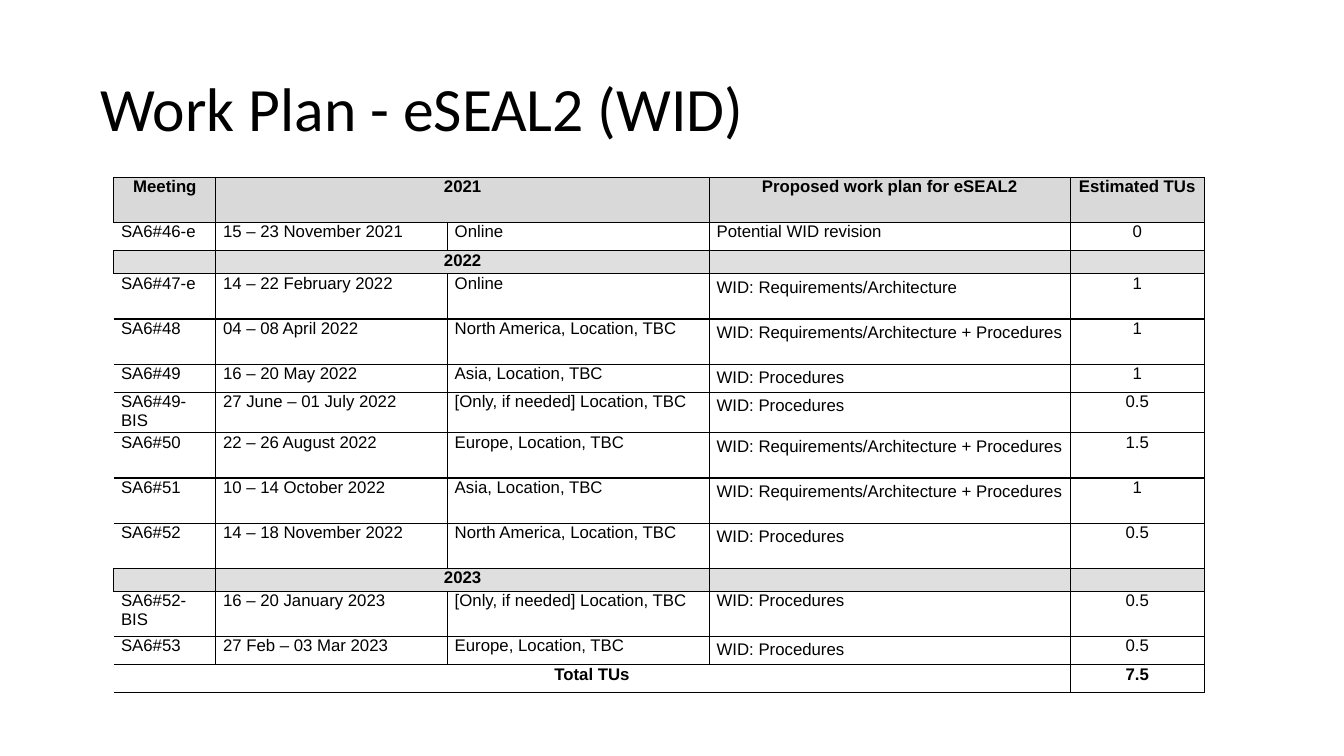
import dataclasses
import typing

import lxml.etree
import pptx
import pptx.dml.color
import pptx.enum.text
import pptx.oxml.ns
import pptx.util

Cm = pptx.util.Cm
Pt = pptx.util.Pt
CENTER = pptx.enum.text.PP_ALIGN.CENTER
LEFT = pptx.enum.text.PP_ALIGN.LEFT

COLUMN_WIDTHS = (2.57, 5.84, 6.6, 9.09, 3.38)
TALL, MEDIUM, SHORT = 1.14, 0.71, 0.58
WHITE, HEADER_GREY, YEAR_GREY = "FFFFFF", "D9D9D9", "DFDFDF"
PROCEDURES = "WID: Procedures"
ARCHITECTURE = "WID: Requirements/Architecture"
COMBINED = "WID: Requirements/Architecture + Procedures"
CELL_FORMAT = {
    "margin_left": Cm(0.18),
    "margin_right": Cm(0.18),
    "margin_top": 0,
    "margin_bottom": 0,
    "vertical_anchor": pptx.enum.text.MSO_ANCHOR.TOP,
}


@dataclasses.dataclass(frozen=True)
class PlanRow:
    texts: tuple[str, ...]
    height: float
    fill: str = WHITE
    bold: bool = False
    merge: tuple[int, int] | None = None
    plan_spacing: float = 1.0


def heading(texts: tuple[str, ...], height: float, fill: str) -> PlanRow:
    return PlanRow(texts, height, fill, True, (1, 2))


def meeting(name: str, dates: str, place: str, plan: str, units: str,
            height: float, plan_spacing: float = 1.15) -> PlanRow:
    return PlanRow((name, dates, place, plan, units), height, plan_spacing=plan_spacing)


ROWS = (
    heading(("Meeting", "2021", "", "Proposed work plan for eSEAL2", "Estimated TUs"),
            TALL, HEADER_GREY),
    meeting("SA6#46-e", "15 – 23 November 2021", "Online", "Potential WID revision", "0",
            MEDIUM, 1.0),
    heading(("", "2022", "", "", ""), SHORT, YEAR_GREY),
    meeting("SA6#47-e", "14 – 22 February 2022", "Online", ARCHITECTURE, "1", TALL),
    meeting("SA6#48", "04 – 08 April 2022", "North America, Location, TBC", COMBINED, "1", TALL),
    meeting("SA6#49", "16 – 20 May 2022", "Asia, Location, TBC", PROCEDURES, "1", MEDIUM),
    meeting("SA6#49-BIS", "27 June – 01 July 2022", "[Only, if needed] Location, TBC",
            PROCEDURES, "0.5", MEDIUM),
    meeting("SA6#50", "22 – 26 August 2022", "Europe, Location, TBC", COMBINED, "1.5", TALL),
    meeting("SA6#51", "10 – 14 October 2022", "Asia, Location, TBC", COMBINED, "1", TALL),
    meeting("SA6#52", "14 – 18 November 2022", "North America, Location, TBC",
            PROCEDURES, "0.5", TALL),
    heading(("", "2023", "", "", ""), SHORT, YEAR_GREY),
    meeting("SA6#52-BIS", "16 – 20 January 2023", "[Only, if needed] Location, TBC",
            PROCEDURES, "0.5", TALL, 1.0),
    meeting("SA6#53", "27 Feb – 03 Mar 2023", "Europe, Location, TBC", PROCEDURES, "0.5", MEDIUM),
    PlanRow(("Total TUs", "", "", "", "7.5"), MEDIUM, bold=True, merge=(0, 3)),
)


def color(value: str) -> pptx.dml.color.RGBColor:
    return pptx.dml.color.RGBColor.from_string(value)


def apply_format(target: typing.Any, values: dict[str, typing.Any]) -> None:
    for name, value in values.items():
        setattr(target, name, value)


def write_text(paragraph: typing.Any, text: str, font: str, size: float, bold: bool) -> None:
    run = paragraph.add_run()
    run.text = text
    apply_format(run.font, {"name": font, "size": Pt(size), "bold": bold})
    run.font.color.rgb = color("000000")


def add_borders(cell: typing.Any, has_left: bool) -> None:
    qn = pptx.oxml.ns.qn
    properties = cell._tc.get_or_add_tcPr()
    for side in ("L", "R", "T", "B"):
        line = lxml.etree.SubElement(properties, qn(f"a:ln{side}"), w=str(Pt(1)))
        if side == "L" and not has_left:
            lxml.etree.SubElement(line, qn("a:noFill"))
            continue
        fill = lxml.etree.SubElement(line, qn("a:solidFill"))
        lxml.etree.SubElement(fill, qn("a:srgbClr"), val="000000")


def fill_cell(cell: typing.Any, row: PlanRow, column: int) -> None:
    add_borders(cell, column > 0 or row.fill != WHITE)
    cell.fill.solid()
    cell.fill.fore_color.rgb = color(row.fill)
    apply_format(cell, CELL_FORMAT)
    paragraph = cell.text_frame.paragraphs[0]
    spacing = row.plan_spacing if column == 3 else 1.0
    if spacing > 1:
        cell.margin_top = Cm(0.03)
    apply_format(paragraph, {
        "alignment": CENTER if row.bold or column == 4 else LEFT,
        "space_before": Pt(1),
        "space_after": Pt(1),
        "line_spacing": spacing,
    })
    if row.texts[column]:
        write_text(paragraph, row.texts[column], "Arial", 12, row.bold)
    else:
        lxml.etree.SubElement(paragraph._p, pptx.oxml.ns.qn("a:endParaRPr"), sz="1200")


def add_title(slide: typing.Any) -> None:
    title = slide.shapes.add_textbox(Cm(2.29), Cm(0.97), Cm(29.21), Cm(3.68))
    apply_format(title.text_frame, {
        "word_wrap": True,
        "vertical_anchor": pptx.enum.text.MSO_ANCHOR.MIDDLE,
    })
    paragraph = title.text_frame.paragraphs[0]
    paragraph.line_spacing = 0.9
    write_text(paragraph, "Work Plan - eSEAL2 (WID)", "Calibri", 44, False)


def add_work_plan(slide: typing.Any) -> None:
    table = slide.shapes.add_table(
        len(ROWS), len(COLUMN_WIDTHS), Cm(2.87), Cm(4.47),
        Cm(sum(COLUMN_WIDTHS)), Cm(sum(row.height for row in ROWS)),
    ).table
    apply_format(table, {"first_row": False, "horz_banding": False})
    for column, width in zip(table.columns, COLUMN_WIDTHS):
        column.width = Cm(width)
    for index, row in enumerate(ROWS):
        table.rows[index].height = Cm(row.height)
        for column in range(len(COLUMN_WIDTHS)):
            fill_cell(table.cell(index, column), row, column)
        if row.merge:
            first, last = row.merge
            table.cell(index, first).merge(table.cell(index, last))


def main() -> None:
    presentation = pptx.Presentation()
    apply_format(presentation, {"slide_width": Cm(33.87), "slide_height": Cm(19.05)})
    slide = presentation.slides.add_slide(presentation.slide_layouts[6])
    add_title(slide)
    add_work_plan(slide)
    presentation.save("out.pptx")


if __name__ == "__main__":
    main()
